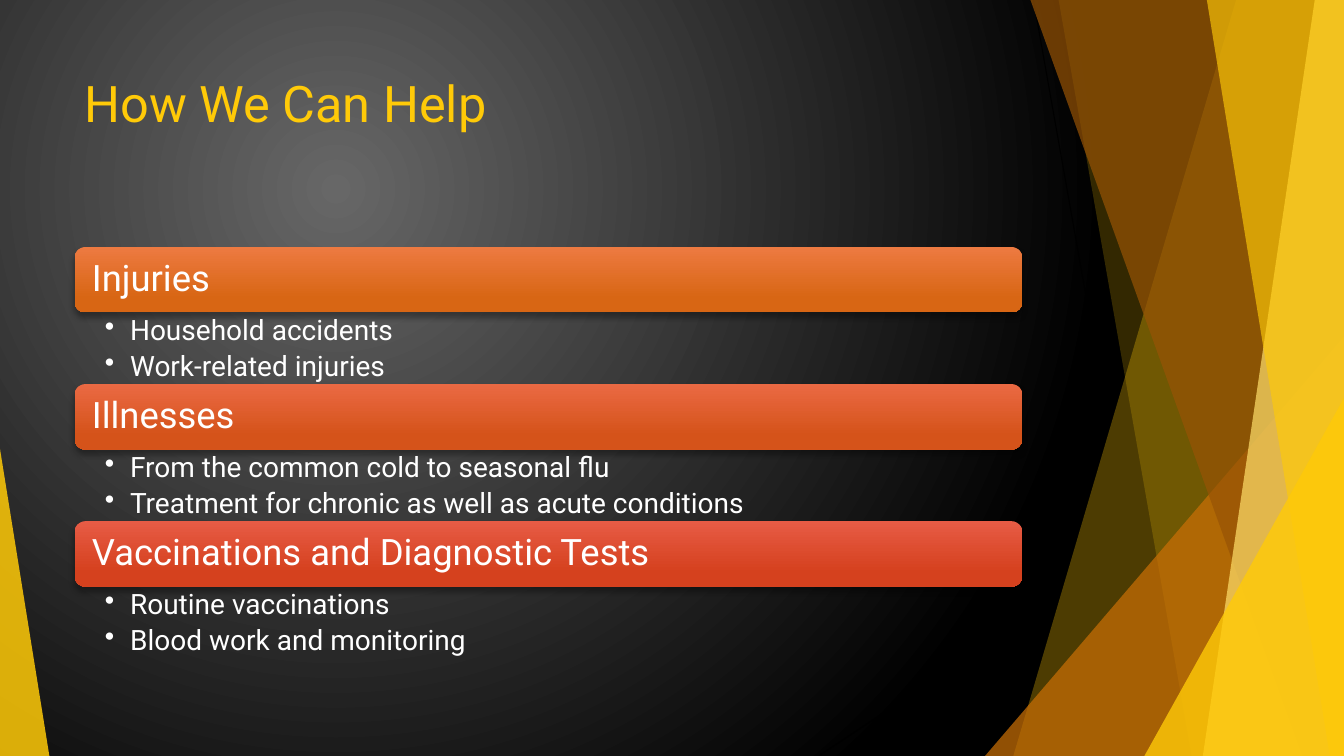
"""Build the How We Can Help slide: three headed lists on a dark, gold-edged page."""
from dataclasses import dataclass

from lxml.etree import SubElement as Sub
from pptx import Presentation
from pptx.dml.color import RGBColor as RGB
from pptx.enum.shapes import MSO_CONNECTOR as Line, MSO_SHAPE as Shape
from pptx.enum.text import MSO_ANCHOR as Anchor
from pptx.oxml.ns import qn
from pptx.util import Inches, Pt


@dataclass(frozen=True)
class Theme:
    font: str = "Roboto"
    gold: str = "FFCA08"
    pale: str = "FFDF6B"
    amber: str = "C96F06"
    brown: str = "975305"
    white: str = "FFFFFF"
    black: str = "000000"
    gray: str = "676767"
    bars: tuple = (("ED7A41", "D86614"), ("EA6943", "D5531A"), ("E75B45", "D5411E"))
    title: int = 36
    head: int = 26
    item: int = 20


theme = Theme()


def write(box, lines, size, color=theme.white, inset=(0.1, 0.05, 0.1, 0.05),
          anchor=Anchor.TOP, space=1.0, after=0, bullet=None):
    """Fill a shape with formatted lines of text."""
    frame = box.text_frame
    frame.word_wrap = True
    frame.vertical_anchor = anchor
    (frame.margin_left, frame.margin_top,
     frame.margin_right, frame.margin_bottom) = map(Inches, inset)
    for num, line in enumerate(lines):
        para = frame.add_paragraph() if num else frame.paragraphs[0]
        para.line_spacing = space
        para.space_after = Pt(after)
        para.alignment = 1
        run = para.add_run()
        run.text = line
        run.font.name = theme.font
        run.font.size = Pt(size)
        run.font.color.rgb = RGB.from_string(color)
        if bullet:
            props = para._p.get_or_add_pPr()
            props.set("marL", str(Inches(0.25)))
            props.set("indent", str(-Inches(0.25)))
            Sub(props, qn("a:buChar"), char=bullet)


def blend(fill, colors, end):
    """Give a fill two gradient stops, running downward."""
    fill.gradient()
    fill.gradient_angle = 270
    for stop, color, place in zip(fill.gradient_stops, colors, (0, end)):
        stop.color.rgb = RGB.from_string(color)
        stop.position = place


deck = Presentation()
deck.slide_width, deck.slide_height = Inches(13.33), Inches(7.5)
slide = deck.slides.add_slide(deck.slide_layouts[6])
shapes = slide.shapes

blend(slide.background.fill, (theme.gray, theme.black), 1)
grad = slide.element.find(".//" + qn("a:gradFill"))
grad.remove(grad.find(qn("a:lin")))
glow = Sub(grad, qn("a:path"), path="circle")
Sub(glow, qn("a:fillToRect"), l="50000", t="50000", r="100000", b="100000")

for ends in ((8.12, 7.5, 13.33, 4.03), (10.25, 0, 11.58, 7.5)):
    line = shapes.add_connector(Line.STRAIGHT, *map(Inches, ends))
    line.line.color.rgb = RGB.from_string(theme.black)
    line.line.width = Pt(0.75)
    Sub(line._element.spPr, qn("a:effectLst"))

right, base = 13.34, 7.5
shards = (
    (theme.gold, 30, ((12.26, 0), (10.05, base), (right, base), (right, 0))),
    (theme.gold, 20, ((10.5, 0), (11.82, base), (right, base), (right, 0))),
    (theme.amber, 72, ((9.77, base), (right, 3.33), (right, base))),
    (theme.brown, 70, ((10.22, 0), (12.92, base), (right, base), (right, 0))),
    (theme.pale, 70, ((13.04, 0), (11.93, base), (right, base), (right, 0))),
    (theme.gold, 65, ((11.97, 0), (13.19, base), (right, base), (right, 0))),
    (theme.gold, 80, ((11.35, base), (right, 3.93), (right, base))),
    (theme.gold, 85, ((-0.01, 4.39), (0.49, base), (-0.01, base))),
)
for color, alpha, points in shards:
    first, *rest = [(Inches(x), Inches(y)) for x, y in points]
    path = shapes.build_freeform(*first)
    path.add_line_segments(rest, close=True)
    shard = path.convert_to_shape()
    shard.shadow.inherit = False
    shard.fill.solid()
    shard.fill.fore_color.rgb = RGB.from_string(color)
    shard.line.fill.background()
    tint = shard._element.spPr.find(qn("a:solidFill") + "/" + qn("a:srgbClr"))
    Sub(tint, qn("a:alpha"), val=str(alpha * 1000))

left, width, top = Inches(0.74), Inches(9.4), Inches(2.45)
tall, deep = Inches(0.65), Inches(0.71)
title = shapes.add_textbox(left, Inches(0.67), width, Inches(1.44))
write(title, ["How We Can Help"], theme.title, color=theme.gold)

groups = (
    ("Injuries", ("Household accidents", "Work-related injuries")),
    ("Illnesses", ("From the common cold to seasonal flu",
                   "Treatment for chronic as well as acute conditions")),
    ("Vaccinations and Diagnostic Tests", ("Routine vaccinations",
                                           "Blood work and monitoring")),
)
for num, ((head, items), colors) in enumerate(zip(groups, theme.bars)):
    y = top + num * (tall + deep)
    bar = shapes.add_shape(Shape.ROUNDED_RECTANGLE, left, y, width, tall)
    blend(bar.fill, colors, 0.78)
    bar.line.fill.background()
    bar.shadow.inherit = False
    shade = Sub(bar._element.spPr.find(qn("a:effectLst")), qn("a:outerShdw"),
                blurRad=str(Pt(4)), dist=str(Pt(3)), dir="5400000", rotWithShape="0")
    Sub(Sub(shade, qn("a:srgbClr"), val=theme.black), qn("a:alpha"), val="35000")
    write(bar, [head], theme.head, inset=(0.14, 0.11, 0.14, 0.11),
          anchor=Anchor.MIDDLE, space=0.9)
    box = shapes.add_textbox(left, y + tall, width, deep)
    write(box, items, theme.item, inset=(0.3, 0.04, 0.2, 0.04),
          space=0.9, after=4, bullet="•")

deck.save("out.pptx")
